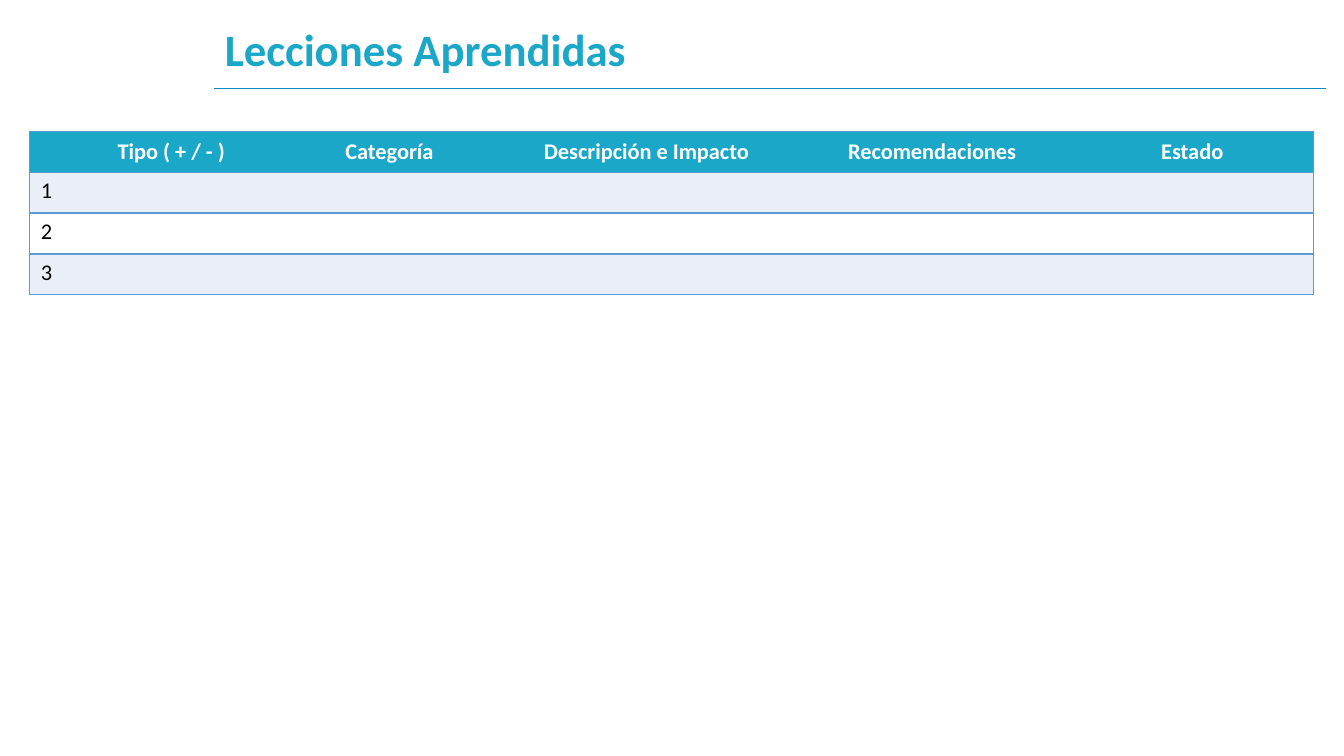
import pptx
import pptx.dml.color
import pptx.enum.shapes
import pptx.enum.text
import pptx.oxml
import pptx.oxml.ns
import pptx.util
from lxml import etree

Pt = pptx.util.Pt
qn = pptx.oxml.ns.qn
ALIGN = pptx.enum.text.PP_ALIGN
ANCHOR = pptx.enum.text.MSO_ANCHOR

COLORS = {
    "accent": "1AA7C8",
    "rule": "098CBF",
    "border": "5B9BD5",
    "band": "EAEFF7",
    "white": "FFFFFF",
    "black": "000000",
}
HEADINGS = ["", "Tipo ( + / - )", "Categoría", "Descripción e Impacto",
            "Recomendaciones", "Estado"]
COLUMN_WIDTHS = [24.5, 154, 157.7, 209.5, 198.7, 172.8]
LESSON_COUNT = 3
ROW_HEIGHT = 29.2


class LessonsSlide:
    font_name = "Calibri"

    def __init__(self, deck):
        self.slide = deck.slides.add_slide(deck.slide_layouts[5])

    def color(self, name):
        return pptx.dml.color.RGBColor.from_string(COLORS[name])

    def style(self, paragraph, size, color, bold=False):
        paragraph.font.name = self.font_name
        paragraph.font.size = Pt(size)
        paragraph.font.bold = bold
        paragraph.font.color.rgb = self.color(color)

    def title(self, text, left, top, width, height):
        heading = self.slide.shapes.title
        heading.left, heading.top = Pt(left), Pt(top)
        heading.width, heading.height = Pt(width), Pt(height)
        frame = heading.text_frame
        frame.text = text
        frame.word_wrap = True
        frame.auto_size = pptx.enum.text.MSO_AUTO_SIZE.NONE
        frame.vertical_anchor = ANCHOR.MIDDLE
        paragraph = frame.paragraphs[0]
        paragraph.alignment = ALIGN.LEFT
        paragraph.line_spacing = 0.9
        self.style(paragraph, 32, "accent", bold=True)

    def rule(self, left, right, y):
        line = self.slide.shapes.add_connector(
            pptx.enum.shapes.MSO_CONNECTOR.STRAIGHT,
            Pt(left), Pt(y), Pt(right), Pt(y))
        line.line.color.rgb = self.color("rule")
        line.line.width = Pt(0.5)
        etree.SubElement(line._element.spPr, qn("a:effectLst"))

    def borders(self, cell, visible_sides):
        properties = cell._tc.get_or_add_tcPr()
        for side in "LRTB":
            edge = etree.SubElement(properties, qn(f"a:ln{side}"), w=str(Pt(1)))
            if side in visible_sides:
                fill = etree.SubElement(edge, qn("a:solidFill"))
                etree.SubElement(fill, qn("a:srgbClr"), val=COLORS["border"])
            else:
                etree.SubElement(edge, qn("a:noFill"))

    def cell(self, cell, text, fill, color, sides, bold):
        cell.text = text
        cell.vertical_anchor = ANCHOR.MIDDLE if bold else ANCHOR.TOP
        paragraph = cell.text_frame.paragraphs[0]
        paragraph.alignment = ALIGN.CENTER
        self.style(paragraph, 16, color, bold)
        self.borders(cell, sides)
        cell.fill.solid()
        cell.fill.fore_color.rgb = self.color(fill)

    def table(self, rows, left, top):
        last = len(COLUMN_WIDTHS) - 1
        table = self.slide.shapes.add_table(
            len(rows), len(COLUMN_WIDTHS), Pt(left), Pt(top),
            Pt(sum(COLUMN_WIDTHS)), Pt(ROW_HEIGHT * len(rows))).table
        table.horz_banding = False
        for column, width in zip(table.columns, COLUMN_WIDTHS):
            column.width = Pt(width)
        for r, texts in enumerate(rows):
            table.rows[r].height = Pt(ROW_HEIGHT)
            header = r == 0
            fill = "accent" if header else "band" if r % 2 else "white"
            color = "white" if header else "black"
            for c, text in enumerate(texts):
                sides = "TB" + ("L" if c == 0 else "") + ("R" if c == last else "")
                self.cell(table.cell(r, c), text, fill, color, sides, header)


def main():
    deck = pptx.Presentation()
    deck.slide_width, deck.slide_height = Pt(960), Pt(540)
    lessons = LessonsSlide(deck)
    lessons.rule(152.6, 946.8, 63.2)
    lessons.title("Lecciones Aprendidas", 153.4, 16.6, 792.7, 41)
    blanks = [""] * (len(HEADINGS) - 1)
    numbered = [[str(n), *blanks] for n in range(1, LESSON_COUNT + 1)]
    lessons.table([HEADINGS, *numbered], 20.9, 93.8)
    deck.save("out.pptx")


if __name__ == "__main__":
    main()
